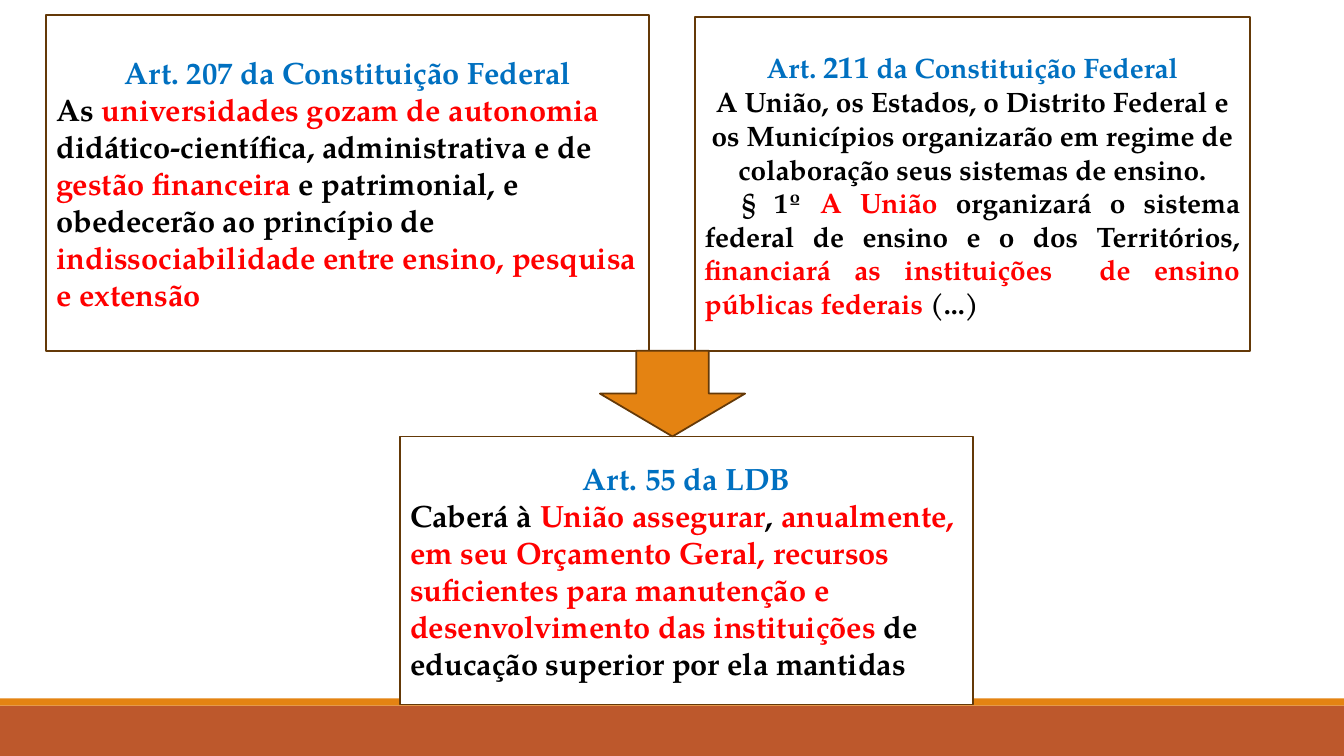
from pptx import Presentation
from pptx import util as u
from pptx.dml.color import RGBColor
from pptx.enum import shapes, text

ORANGE = RGBColor(0xE4, 0x83, 0x12)
RUST = RGBColor(0xBD, 0x58, 0x2C)
BROWN = RGBColor(0x64, 0x39, 0x08)
WHITE = RGBColor(0xFF, 0xFF, 0xFF)
BLACK = RGBColor(0x00, 0x00, 0x00)
BLUE = RGBColor(0x00, 0x70, 0xC0)
RED = RGBColor(0xFF, 0x00, 0x00)

LEFT = text.PP_ALIGN.LEFT
CENTER = text.PP_ALIGN.CENTER
JUSTIFY = text.PP_ALIGN.JUSTIFY

SLIDE_WIDTH, SLIDE_HEIGHT = 13.33, 7.5
BAND_TOP, STRIPE_HEIGHT = 7, 0.07
ARTICLES_BOTTOM, LDB_TOP = 3.48, 4.33


class SlideBuilder:
    font_format = {"name": "TeX Gyre Pagella", "bold": True}
    frame_format = {"word_wrap": True, "vertical_anchor": text.MSO_ANCHOR.MIDDLE}
    line_width = 1.25

    def __init__(self, slide):
        self.slide = slide

    def add_block(self, left, top, width, height, fill, line=None,
                  kind=shapes.MSO_SHAPE.RECTANGLE):
        """Draw a filled preset shape, outlined only when a line colour is given."""
        shape = self.slide.shapes.add_shape(
            kind, *(u.Inches(length) for length in (left, top, width, height)))
        shape.shadow.inherit = False
        shape.fill.solid()
        shape.fill.fore_color.rgb = fill
        if line is None:
            shape.line.fill.background()
        else:
            shape.line.color.rgb = line
            shape.line.width = u.Pt(self.line_width)
        return shape

    def add_article(self, left, top, width, height, paragraphs):
        """Draw a text box from (alignment, first-line indent, runs) paragraphs."""
        shape = self.add_block(left, top, width, height, WHITE, BROWN)
        frame = shape.text_frame
        for name, value in self.frame_format.items():
            setattr(frame, name, value)
        for index, (alignment, indent, runs) in enumerate(paragraphs):
            paragraph = frame.add_paragraph() if index else frame.paragraphs[0]
            paragraph.alignment = alignment
            if indent:
                paragraph._p.get_or_add_pPr().set("indent", str(u.Inches(indent)))
            for wording, size, color in runs:
                self.add_run(paragraph, wording, size, color)

    def add_run(self, paragraph, wording, size, color):
        run = paragraph.add_run()
        run.text = wording
        for name, value in {**self.font_format, "size": u.Pt(size)}.items():
            setattr(run.font, name, value)
        run.font.color.rgb = color


ARTICLE_207 = [
    (CENTER, 0, [("Art. 207 da Constituição Federal", 22, BLUE)]),
    (LEFT, 0, [
        ("As ", 22, BLACK),
        ("universidades gozam de autonomia ", 22, RED),
        ("didático-científica, administrativa e de ", 22, BLACK),
        ("gestão financeira ", 22, RED),
        ("e patrimonial, e obedecerão ao princípio de ", 22, BLACK),
        ("indissociabilidade entre ensino, pesquisa e extensão", 22, RED),
    ]),
]
ARTICLE_211 = [
    (CENTER, 0, [
        ("Art. ", 20, BLUE),
        ("211", 22, BLUE),
        (" da Constituição Federal", 20, BLUE),
    ]),
    (CENTER, 0, [
        ("A União, os Estados, o Distrito Federal e os Municípios organizarão "
         "em regime de colaboração seus sistemas de ensino.", 20, BLACK),
    ]),
    (JUSTIFY, 0.37, [
        ("§ 1º ", 20, BLACK),
        ("A União ", 20, RED),
        ("organizará o sistema federal de ensino e o dos Territórios, ", 20, BLACK),
        ("financiará as instituições  de ensino públicas federais ", 20, RED),
        ("(...)", 20, BLACK),
    ]),
]
ARTICLE_55 = [
    (CENTER, 0, [("Art. 55 da LDB", 22, BLUE)]),
    (LEFT, 0, [
        ("Caberá à ", 22, BLACK),
        ("União assegurar", 22, RED),
        (", ", 22, BLACK),
        ("anualmente, em seu Orçamento Geral, recursos suficientes para "
         "manutenção e desenvolvimento das instituições ", 22, RED),
        ("de educação superior por ela mantidas", 22, BLACK),
    ]),
]


def main():
    presentation = Presentation()
    presentation.slide_width = u.Inches(SLIDE_WIDTH)
    presentation.slide_height = u.Inches(SLIDE_HEIGHT)
    builder = SlideBuilder(presentation.slides.add_slide(presentation.slide_layouts[6]))

    builder.add_block(0, BAND_TOP, SLIDE_WIDTH, SLIDE_HEIGHT - BAND_TOP, RUST)
    builder.add_block(0, BAND_TOP - STRIPE_HEIGHT, SLIDE_WIDTH, STRIPE_HEIGHT, ORANGE)

    for left, top, width, bottom, paragraphs in (
        (0.46, 0.15, 5.98, ARTICLES_BOTTOM, ARTICLE_207),
        (6.89, 0.17, 5.51, ARTICLES_BOTTOM, ARTICLE_211),
        (3.97, LDB_TOP, 5.68, 6.99, ARTICLE_55),
    ):
        builder.add_article(left, top, width, bottom - top, paragraphs)

    builder.add_block(5.95, ARTICLES_BOTTOM, 1.44, LDB_TOP - ARTICLES_BOTTOM,
                      ORANGE, BROWN, shapes.MSO_SHAPE.DOWN_ARROW)
    presentation.save("out.pptx")


if __name__ == "__main__":
    main()
